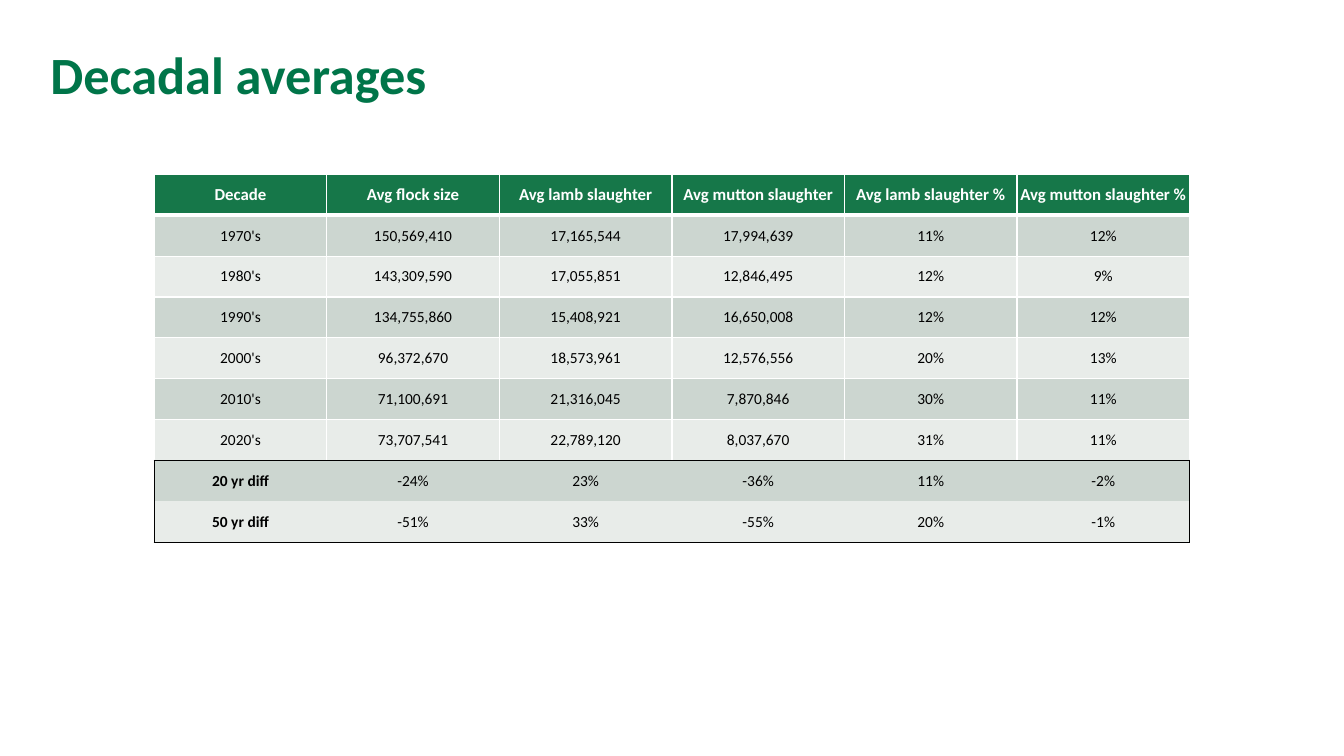
from lxml.etree import SubElement
from pptx import Presentation
from pptx.dml.color import RGBColor
from pptx.enum.text import MSO_ANCHOR as Anchor, MSO_AUTO_SIZE as AutoSize, PP_ALIGN as Align
from pptx.oxml.ns import qn
from pptx.util import Inches, Pt

COLORS = {
    "title": "007549", "header": "167749", "band": "CCD6D0", "light": "E8ECE9",
    "white": "FFFFFF", "black": "000000",
}
HEADINGS = ["Decade", "Avg flock size", "Avg lamb slaughter", "Avg mutton slaughter",
            "Avg lamb slaughter %", "Avg mutton slaughter %"]
DECADES = [
    ["1970's", "150,569,410", "17,165,544", "17,994,639", "11%", "12%"],
    ["1980's", "143,309,590", "17,055,851", "12,846,495", "12%", "9%"],
    ["1990's", "134,755,860", "15,408,921", "16,650,008", "12%", "12%"],
    ["2000's", "96,372,670", "18,573,961", "12,576,556", "20%", "13%"],
    ["2010's", "71,100,691", "21,316,045", "7,870,846", "30%", "11%"],
    ["2020's", "73,707,541", "22,789,120", "8,037,670", "31%", "11%"],
]
DIFFERENCES = [
    ["20 yr diff", "-24%", "23%", "-36%", "11%", "-2%"],
    ["50 yr diff", "-51%", "33%", "-55%", "20%", "-1%"],
]


class DecadeSlide:
    """Style and current slide; the grid counts in hundredths of an inch."""

    FONT = "Calibri"
    UNIT = Inches(0.01)

    def __init__(self, deck):
        self.slide = deck.slides.add_slide(deck.slide_layouts[5])

    def grid(self, *units):
        return [self.UNIT * unit for unit in units]

    def style(self, paragraph, size, color, bold, align):
        paragraph.alignment = align
        for run in paragraph.runs:
            run.font.name, run.font.size, run.font.bold = self.FONT, Pt(size), bold
            run.font.color.rgb = RGBColor.from_string(COLORS[color])

    def title(self, text, area):
        heading = self.slide.shapes.title
        heading.left, heading.top, heading.width, heading.height = self.grid(*area)
        frame = heading.text_frame
        frame.text = text
        frame.auto_size, frame.vertical_anchor = AutoSize.NONE, Anchor.MIDDLE
        frame.paragraphs[0].line_spacing = 0.9
        self.style(frame.paragraphs[0], 37.4, "title", True, Align.LEFT)

    def borders(self, cell, edges):
        """Draw left, right, top and bottom edges; None hides an edge."""
        properties = cell._tc.get_or_add_tcPr()
        for side, edge in zip("LRTB", edges):
            line = SubElement(properties, qn(f"a:ln{side}"))
            if edge is None:
                SubElement(line, qn("a:noFill"))
                continue
            color, width = edge
            line.set("w", str(Pt(width)))
            fill = SubElement(line, qn("a:solidFill"))
            SubElement(fill, qn("a:srgbClr")).set("val", COLORS[color])

    def cell(self, cell, text, size, color, bold, fill, edges):
        cell.text = text
        cell.vertical_anchor = Anchor.MIDDLE
        cell.margin_left = cell.margin_right = cell.margin_top = cell.margin_bottom = 0
        self.style(cell.text_frame.paragraphs[0], size, color, bold, Align.CENTER)
        self.borders(cell, edges)
        cell.fill.solid()
        cell.fill.fore_color.rgb = RGBColor.from_string(COLORS[fill])

    def table(self, headings, decades, differences, area):
        rows = [headings, *decades, *differences]
        first_diff, last = 1 + len(decades), len(rows) - 1
        last_column = len(headings) - 1
        left, top, width, height = self.grid(*area)
        averages = self.slide.shapes.add_table(
            len(rows), len(headings), left, top, width, height).table
        white, thick, black = ("white", 1), ("white", 3), ("black", 1)

        for r, row in enumerate(rows):
            is_header, is_diff = r == 0, r >= first_diff
            size, color = (12, "white") if is_header else (11, "black")
            fill = "header" if is_header else "band" if r % 2 else "light"
            above = thick if r == 1 else black if r == first_diff else None if is_diff else white
            below = (thick if is_header else black if r in (first_diff - 1, last)
                     else None if is_diff else white)
            for c, text in enumerate(row):
                # The difference rows share one black frame
                before = white if not is_diff else black if c == 0 else None
                after = white if not is_diff else black if c == last_column else None
                bold = is_header or (is_diff and c == 0)
                self.cell(averages.cell(r, c), text, size, color, bold, fill,
                          (before, after, above, below))


def main():
    deck = Presentation()
    deck.slide_width, deck.slide_height = Inches(13.33), Inches(7.5)
    page = DecadeSlide(deck)

    # Heading
    page.title("Decadal averages", (40, 25, 1254, 104))

    # Averages by decade, then the framed differences
    page.table(HEADINGS, DECADES, DIFFERENCES, (153, 173, 1027, 365))

    deck.save("out.pptx")


if __name__ == "__main__":
    main()
